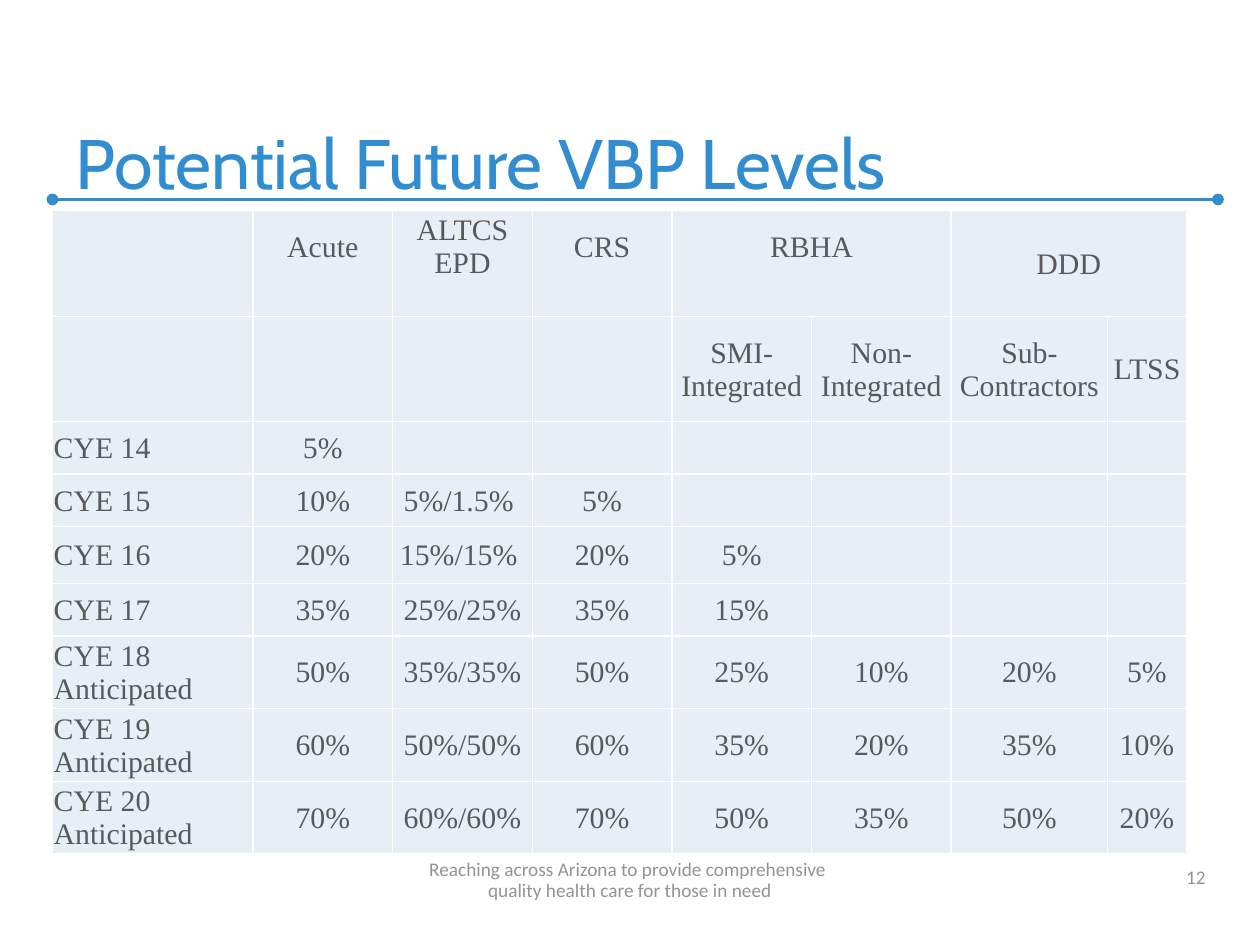
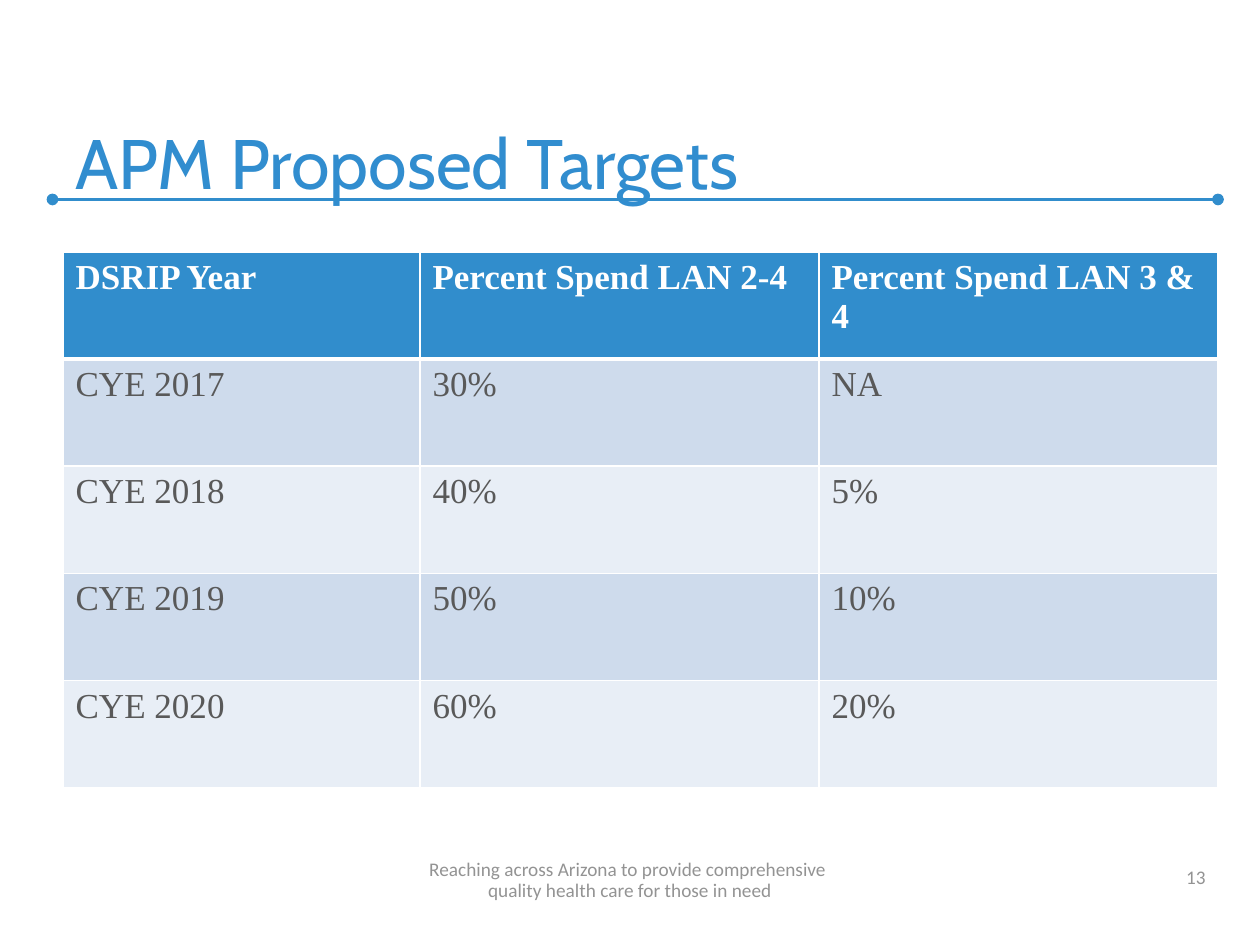
from lxml import etree
from pptx import Presentation
from pptx.dml.color import RGBColor
from pptx.enum.shapes import MSO_CONNECTOR as Connector
from pptx.enum.text import MSO_ANCHOR as Anchor, PP_ALIGN as Align
from pptx.oxml.ns import qn
from pptx.util import Inches, Pt

COLORS = {
    "rule": "318DCC",
    "title": "318DCF",
    "band": "CEDBEC",
    "pale": "E8EEF6",
    "text": "595959",
    "muted": "939393",
    "white": "FFFFFF",
}
TITLE_FONT, BODY_FONT, TABLE_FONT = "Cabin", "Calibri", "Times New Roman"
COLUMNS, ROWS = 120, 90
UNIT = Inches(10) / COLUMNS
FIRST_NUMBER = 12
FOOTER = "Reaching across Arizona to provide comprehensive \vquality health care for those in need"

TITLE_BOX = (6, 4, 109, 16)
RULE_BOX = (5, 19, 111, 0)
NUMBER_BOX = (88, 81.4, 28, 3.8)
FOOTER_BOX = (0, 81.4, COLUMNS, 5)

LEVELS_BOX = (5, 20, 108, 61)
LEVELS_WIDTHS = [19.1] + [13.3] * 5 + [14.9, 7.5]
LEVELS_HEIGHTS = [10, 10, 5, 5, 5.4, 5] + [6.86] * 3
LEVELS_LINE = 0.27
LEVELS = [
    ["", "Acute", "ALTCS EPD", "CRS", "RBHA", "", "DDD", ""],
    ["", "", "", "", "SMI-Integrated", "Non-Integrated", "Sub-Contractors", "LTSS"],
    ["CYE 14", "5%", "", "", "", "", "", ""],
    ["CYE 15", "10%", "5%/1.5% ", "5%", "", "", "", ""],
    ["CYE 16", "20%", "15%/15% ", "20%", "5%", "", "", ""],
    ["CYE 17", "35%", "25%/25%", "35%", "15%", "", "", ""],
    ["CYE 18 Anticipated", "50%", "35%/35%", "50%", "25%", "10%", "20%", "5%"],
    ["CYE 19 Anticipated", "60%", "50%/50%", "60%", "35%", "20%", "35%", "10%"],
    ["CYE 20 Anticipated", "70%", "60%/60%", "70%", "50%", "35%", "50%", "20%"],
]

TARGETS_BOX = (6, 24, 110, 51)
TARGETS_WIDTHS = [34, 38, 38]
TARGETS = [
    ["DSRIP Year", "Percent Spend LAN 2-4", "Percent Spend LAN 3 & 4"],
    ["CYE 2017", "30%", "NA"],
    ["CYE 2018", "40%", "5%"],
    ["CYE 2019", "50%", "10%"],
    ["CYE 2020", "60%", "20%"],
]


def units(*counts):
    return [round(count * UNIT) for count in counts]


def color(name):
    return RGBColor.from_string(COLORS[name])


def style(paragraph, font_name, size, color_name, align=None, bold=False):
    paragraph.alignment = align
    font = paragraph.font
    font.name, font.size, font.bold = font_name, Pt(size), bold
    font.color.rgb = color(color_name)


def add_title(slide, box, text):
    title = slide.shapes.title
    title.left, title.top, title.width, title.height = units(*box)
    title.text_frame.text = text
    title.text_frame.vertical_anchor = Anchor.BOTTOM
    style(title.text_frame.paragraphs[0], TITLE_FONT, 40, "title", Align.LEFT)


def add_rule(slide, box):
    left, top, width, height = units(*box)
    rule = slide.shapes.add_connector(Connector.STRAIGHT, left, top, left + width, top + height)
    rule.line.color.rgb = color("rule")
    rule.line.width = Pt(2.25)
    for end in ("a:headEnd", "a:tailEnd"):
        etree.SubElement(rule.line._get_or_add_ln(), qn(end), type="oval")
    etree.SubElement(rule._element.spPr, qn("a:effectLst"))


def add_note(slide, box, text, align, spacing=None):
    frame = slide.shapes.add_textbox(*units(*box)).text_frame
    frame.word_wrap = True
    frame.vertical_anchor = Anchor.BOTTOM
    frame.text = text
    paragraph = frame.paragraphs[0]
    paragraph.line_spacing = spacing
    style(paragraph, BODY_FONT, 11, "muted", align)


def start_slide(presentation, title, number):
    slide = presentation.slides.add_slide(presentation.slide_layouts[5])
    add_rule(slide, RULE_BOX)
    add_title(slide, TITLE_BOX, title)
    add_note(slide, NUMBER_BOX, str(number), Align.RIGHT)
    add_note(slide, FOOTER_BOX, FOOTER, Align.CENTER, Pt(12))
    return slide


def add_grid(slide, box, widths, heights):
    table = slide.shapes.add_table(len(heights), len(widths), *units(*box)).table
    table.first_row = table.horz_banding = False
    for column, width in zip(table.columns, units(*widths)):
        column.width = width
    for row, height in zip(table.rows, units(*heights)):
        row.height = height
    return table


def paint_cell(cell, fill, top=1, bottom=1):
    properties = cell._tc.get_or_add_tcPr()
    for side, width in (("L", 1), ("R", 1), ("T", top), ("B", bottom)):
        line = etree.SubElement(properties, qn(f"a:ln{side}"), w=str(Pt(width)))
        solid = etree.SubElement(line, qn("a:solidFill"))
        etree.SubElement(solid, qn("a:srgbClr"), val=COLORS["white"])
    cell.fill.solid()
    cell.fill.fore_color.rgb = color(fill)


def add_levels_table(slide, box):
    table = add_grid(slide, box, LEVELS_WIDTHS, LEVELS_HEIGHTS)
    for first in (4, 6):
        table.cell(0, first).merge(table.cell(0, first + 1))
    for row, values in enumerate(LEVELS):
        for column, value in enumerate(values):
            cell = table.cell(row, column)
            paint_cell(cell, "pale")
            cell.margin_left = cell.margin_right = cell.margin_top = Inches(0.01)
            raised = row == 0 and 0 < column < 6
            cell.margin_bottom = Inches(LEVELS_LINE if raised else 0)
            cell.vertical_anchor = Anchor.MIDDLE
            cell.text = value
            align = Align.CENTER if column else Align.LEFT
            style(cell.text_frame.paragraphs[0], TABLE_FONT, 17, "text", align)


def add_targets_table(slide, box):
    count = len(TARGETS)
    table = add_grid(slide, box, TARGETS_WIDTHS, [box[3] / count] * count)
    for row, values in enumerate(TARGETS):
        header = row == 0
        fill = "rule" if header else ("pale", "band")[row % 2]
        for column, value in enumerate(values):
            cell = table.cell(row, column)
            paint_cell(cell, fill, 3 if row == 1 else 1, 3 if header else 1)
            cell.text = value
            ink = "white" if header else "text"
            style(cell.text_frame.paragraphs[0], TABLE_FONT, 20, ink, bold=header)


def main():
    presentation = Presentation()
    presentation.slide_width, presentation.slide_height = units(COLUMNS, ROWS)
    pages = [
        ("Potential Future VBP Levels", add_levels_table, LEVELS_BOX),
        ("APM Proposed Targets", add_targets_table, TARGETS_BOX),
    ]
    for number, (title, add_table, box) in enumerate(pages, FIRST_NUMBER):
        add_table(start_slide(presentation, title, number), box)
    presentation.save("out.pptx")


if __name__ == "__main__":
    main()
